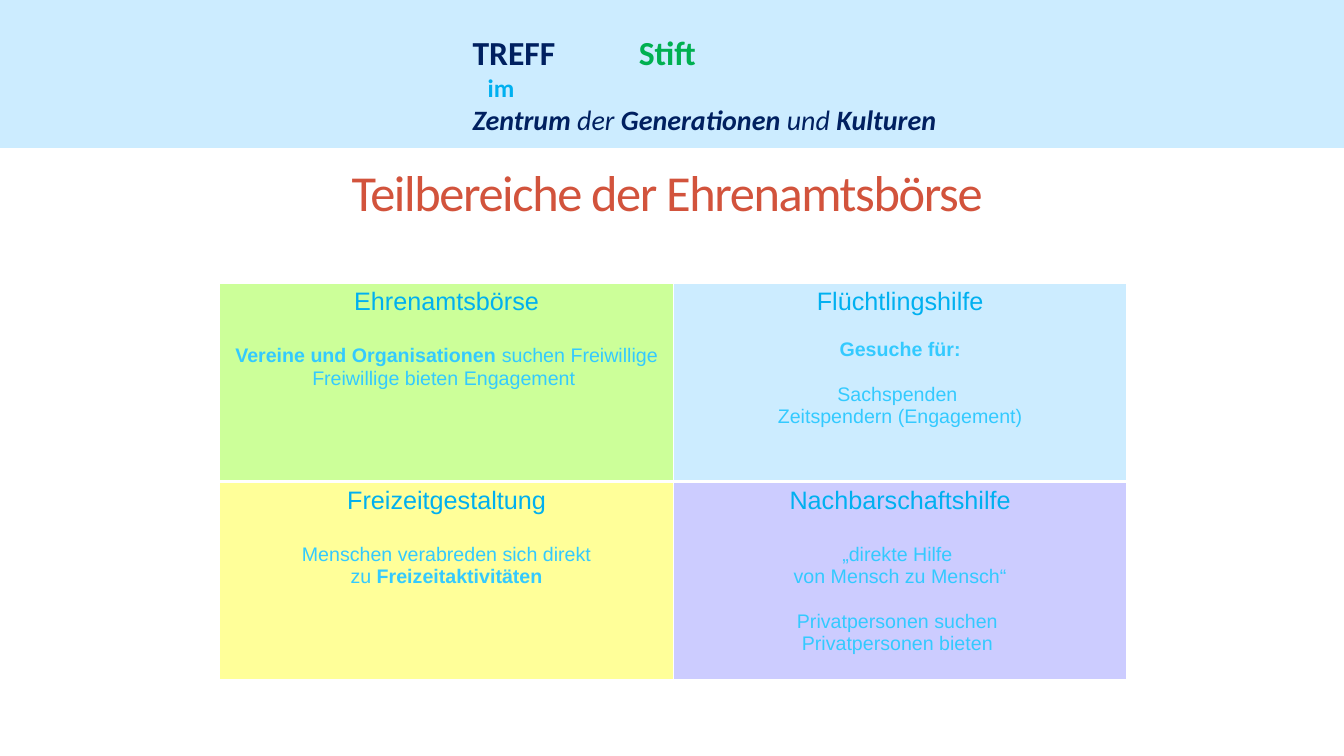
from dataclasses import dataclass

from lxml.etree import SubElement
from pptx import Presentation
from pptx.dml.color import RGBColor
from pptx.enum.shapes import MSO_SHAPE
from pptx.enum.text import MSO_ANCHOR, PP_ALIGN
from pptx.oxml import parse_xml
from pptx.oxml.ns import nsdecls, qn
from pptx.util import Cm, Pt


@dataclass(frozen=True)
class Theme:
    head_font: str = "Calibri"
    body_font: str = "Arial"
    white: str = "FFFFFF"
    navy: str = "002060"
    green: str = "00B050"
    blue: str = "00B0F0"
    sky: str = "33CAFF"
    red: str = "D2533C"
    band: str = "CCECFF"
    lime: str = "CCFF99"
    yellow: str = "FFFF99"
    lilac: str = "CCCCFF"
    title: int = 36
    name: int = 24
    motto: int = 20
    area: int = 18
    body: int = 14
    area_gap: float = 20.7
    body_gap: float = 16.1


T = Theme()

# Each area: heading, fill, lines as (space before in points, runs as (text, bold))
AREAS = [
    [
        ("Ehrenamtsbörse", T.lime, [
            (T.area_gap, [("Vereine und Organisationen ", True), ("suchen Freiwillige", False)]),
            (0, [("Freiwillige bieten Engagement ", False)]),
        ]),
        ("Flüchtlingshilfe", T.band, [
            (T.body_gap, [("Gesuche für:", True)]),
            (T.body_gap, [("Sachspenden ", False)]),
            (0, [("Zeitspendern (Engagement)", False)]),
        ]),
    ],
    [
        ("Freizeitgestaltung", T.yellow, [
            (T.area_gap, [("Menschen verabreden sich direkt", False)]),
            (0, [("zu ", False), ("Freizeitaktivitäten", True)]),
        ]),
        ("Nachbarschaftshilfe", T.lilac, [
            (T.area_gap, [("„direkte Hilfe ", False)]),
            (0, [("von Mensch zu Mensch“", False)]),
            (T.body_gap, [("Privatpersonen suchen ", False)]),
            (0, [("Privatpersonen bieten ", False)]),
        ]),
    ],
]


def rgb(color):
    return RGBColor.from_string(color)


def add_text(p, text, size, color, font=T.head_font, bold=False, italic=False, spacing=0):
    r = p.add_run()
    r.text = text
    f = r.font
    f.name, f.size, f.bold, f.italic = font, Pt(size), bold, italic
    f.color.rgb = rgb(color)
    if spacing:
        r._r.get_or_add_rPr().set("spc", str(spacing * 100))


def add_box(s, left, top, width, height):
    tf = s.shapes.add_textbox(left, top, width, height).text_frame
    tf.word_wrap = True
    tf.margin_left = tf.margin_right = tf.margin_top = tf.margin_bottom = 0
    return tf


def add_header(s, left, top, width, height):
    band = s.shapes.add_shape(MSO_SHAPE.RECTANGLE, left, top, width, height)
    band.shadow.inherit = False
    band.fill.solid()
    band.fill.fore_color.rgb = rgb(T.band)
    band.line.fill.background()

    tf = add_box(s, left + Cm(11.91), top + Cm(0.81), Cm(12.1), Cm(2.7))
    p = tf.paragraphs[0]
    tabs = SubElement(p._p.get_or_add_pPr(), qn("a:tabLst"))
    SubElement(tabs, qn("a:tab"), pos=str(Cm(4.19)), algn="l")
    add_text(p, "TREFF\t", T.name, T.navy, bold=True)
    add_text(p, "Stift", T.name, T.green, bold=True)

    p = tf.add_paragraph()
    p._p.get_or_add_pPr().set("marL", str(Cm(0.38)))
    add_text(p, "im", T.area, T.blue, bold=True)

    p = tf.add_paragraph()
    motto = ["Zentrum ", "der", " Generationen ", "und", " Kulturen"]
    for i, text in enumerate(motto):
        add_text(p, text, T.motto, T.navy, bold=i % 2 == 0, italic=True)


def add_title(s, left, top, width, height):
    tf = add_box(s, left, top, width, height)
    tf.vertical_anchor = MSO_ANCHOR.MIDDLE
    p = tf.paragraphs[0]
    p.alignment = PP_ALIGN.CENTER
    add_text(p, "Teilbereiche der Ehrenamtsbörse ", T.title, T.red, spacing=-1)


def set_borders(cell, **widths):
    """Draw white borders; widths are points by side: L, R, T, B."""
    tcPr = cell._tc.get_or_add_tcPr()
    for i, (side, width) in enumerate(widths.items()):
        tcPr.insert(i, parse_xml(
            f'<a:ln{side} {nsdecls("a")} w="{Pt(width)}"><a:solidFill>'
            f'<a:srgbClr val="{T.white}"/></a:solidFill></a:ln{side}>'))


def fill_area(cell, heading, color, lines):
    cell.fill.solid()
    cell.fill.fore_color.rgb = rgb(color)
    tf = cell.text_frame
    p = tf.paragraphs[0]
    p.alignment = PP_ALIGN.CENTER
    add_text(p, heading, T.area, T.blue, font=T.body_font)
    for gap, runs in lines:
        p = tf.add_paragraph()
        p.alignment = PP_ALIGN.CENTER
        p.space_before = Pt(gap)
        for text, bold in runs:
            add_text(p, text, T.body, T.sky, font=T.body_font, bold=bold)


def add_areas(s, left, top, width, height):
    table = s.shapes.add_table(len(AREAS), len(AREAS[0]), left, top, width, height).table
    table.first_row = table.horz_banding = False
    for i, row in enumerate(AREAS):
        for j, area in enumerate(row):
            cell = table.cell(i, j)
            fill_area(cell, *area)
            set_borders(cell, L=1, R=1, T=1 if i == 0 else 3, B=3 if i == 0 else 1)


def main():
    prs = Presentation()
    prs.slide_width, prs.slide_height = Cm(33.87), Cm(19.05)
    s = prs.slides.add_slide(prs.slide_layouts[6])
    add_header(s, 0, 0, prs.slide_width, Cm(3.73))
    add_title(s, Cm(5.51), Cm(3.33), Cm(22.86), Cm(3))
    add_areas(s, Cm(5.54), Cm(7.13), Cm(22.86), Cm(10))
    prs.save("out.pptx")


if __name__ == "__main__":
    main()
